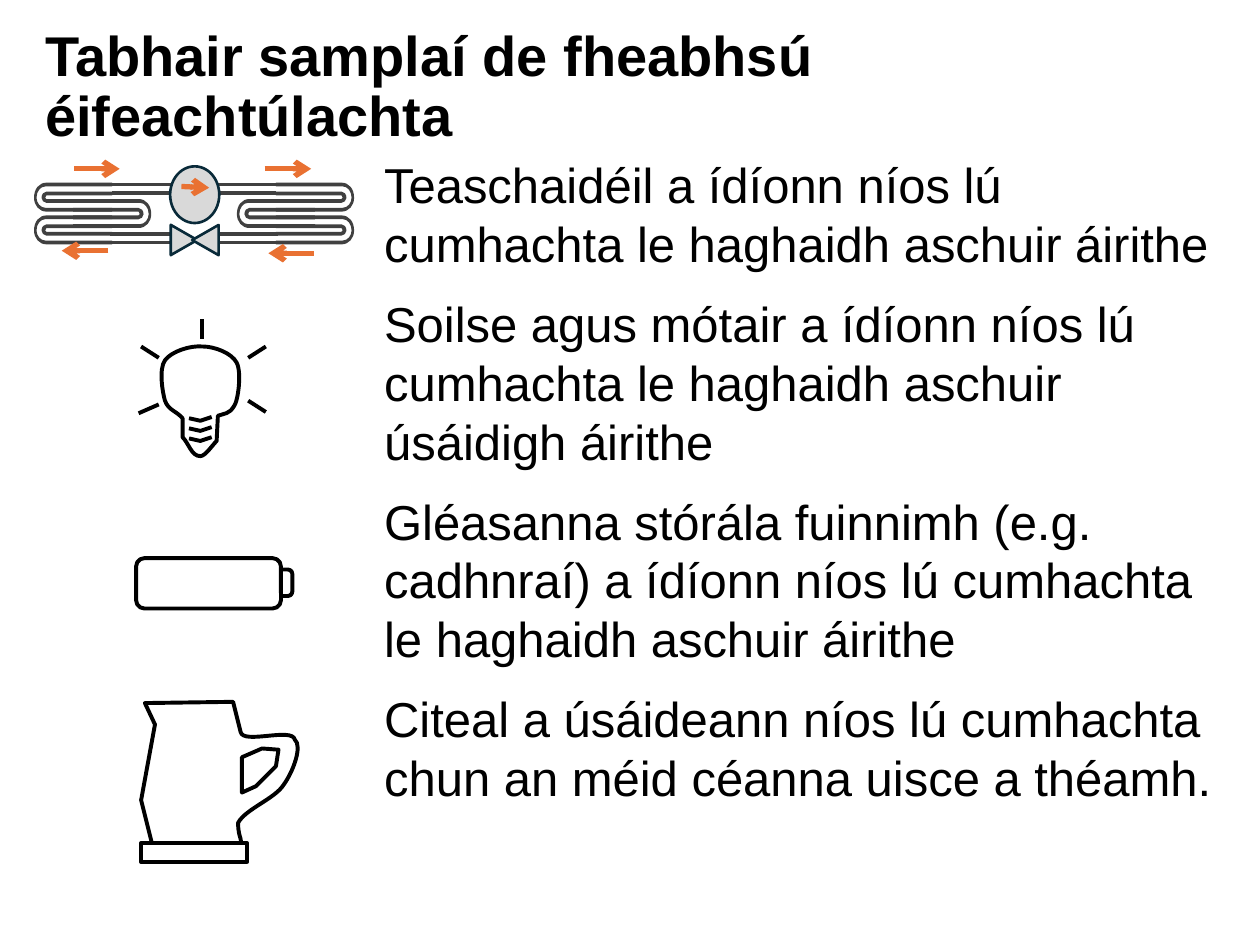
"""Build the slide on improving energy efficiency, with four line drawings."""
from lxml import etree
from pptx import Presentation
from pptx.dml.color import RGBColor
from pptx.enum.shapes import MSO_CONNECTOR, MSO_SHAPE
from pptx.enum.text import MSO_AUTO_SIZE
from pptx.oxml.ns import qn
from pptx.util import Inches, Pt

COLORS = {
    "black": "000000", "white": "FFFFFF", "pipe": "404040",
    "metal": "D9D9D9", "edge": "092A39", "flow": "E97132",
}

prs = Presentation()
prs.slide_width, prs.slide_height = Inches(10), Inches(7.5)
s = prs.slides.add_slide(prs.slide_layouts[6])


def paint(sp, fill, line, width=2.25):
    sp.shadow.inherit = False
    if fill:
        sp.fill.solid()
        sp.fill.fore_color.rgb = RGBColor.from_string(COLORS[fill])
    else:
        sp.fill.background()
    if line:
        sp.line.color.rgb = RGBColor.from_string(COLORS[line])
        sp.line.width = Pt(width)
    else:
        sp.line.fill.background()


def outline(steps, fill, line, closed=True):
    pts = [(Inches(step[i]), Inches(step[i + 1])) for step in steps for i in range(0, len(step), 2)]
    fb = s.shapes.build_freeform(*pts[0])
    fb.add_line_segments(pts[1:], close=closed)
    sp = fb.convert_to_shape()
    segments = iter(list(sp._element.iter(qn("a:lnTo"))))
    for step in steps[1:]:
        seg = next(segments)
        if len(step) == 6:
            seg.tag = qn("a:cubicBezTo")
            for _ in range(2):
                control = next(segments)
                seg.append(control[0])
                control.getparent().remove(control)
    paint(sp, fill, line)


title = ["Tabhair samplaí de fheabhsú éifeachtúlachta"]
examples = [
    "Teaschaidéil a ídíonn níos lú cumhachta le haghaidh aschuir áirithe",
    "Soilse agus mótair a ídíonn níos lú cumhachta le haghaidh aschuir úsáidigh áirithe",
    "Gléasanna stórála fuinnimh (e.g. cadhnraí) a ídíonn níos lú cumhachta le haghaidh aschuir áirithe",
    "Citeal a úsáideann níos lú cumhachta chun an méid céanna uisce a théamh.",
]
for box, texts, size, bold, spacing in [
    ((0.26, 0.17, 9.64, 0.59), title, 32, True, 0.9),
    ((2.95, 1.18, 6.78, 5.79), examples, 28, False, 1.0),
]:
    tf = s.shapes.add_textbox(*map(Inches, box)).text_frame
    tf.word_wrap = True
    tf.auto_size = MSO_AUTO_SIZE.SHAPE_TO_FIT_TEXT
    for i, text in enumerate(texts):
        p = tf.paragraphs[0] if i == 0 else tf.add_paragraph()
        p.text = text
        p.line_spacing = spacing
        if i:
            p.space_before = Pt(12)
        r = p.runs[0]
        r.font.name, r.font.size, r.font.bold = "Arial", Pt(size), bold
        r.font.color.rgb = RGBColor.from_string(COLORS["black"])

outer_bend = [
    (0, 0), (0.52, 0), (0.58, 0, 0.62, 0.05, 0.62, 0.12), (0.62, 0.18, 0.58, 0.23, 0.52, 0.23),
    (0, 0.23), (0, 0.2), (0.53, 0.2), (0.57, 0.2, 0.6, 0.16, 0.6, 0.12),
    (0.6, 0.07, 0.57, 0.03, 0.53, 0.03), (0, 0.03),
]
inner_bend = [
    (0, 0.07), (0.52, 0.07), (0.54, 0.07, 0.56, 0.09, 0.56, 0.12), (0.56, 0.14, 0.54, 0.16, 0.52, 0.16),
    (0, 0.16), (0, 0.13), (0.52, 0.13), (0.52, 0.13, 0.53, 0.13, 0.53, 0.12),
    (0.53, 0.11, 0.52, 0.1, 0.52, 0.1), (0, 0.1),
]
for x, y, side in [
    (2.19, 1.45, 1), (2.19, 1.71, 1), (2.5, 1.58, -1),
    (0.89, 1.45, -1), (0.89, 1.71, -1), (0.58, 1.58, 1),
]:
    for bend in (outer_bend, inner_bend):
        outline([tuple(y + v if i % 2 else x + side * v for i, v in enumerate(step)) for step in bend],
                "pipe", None)

for x, top in [(1.72, 1.84), (1.7, 1.45), (0.87, 1.84), (0.89, 1.45)]:
    for y in (top, top + 0.07):
        outline([(x, y), (x + 0.49, y), (x + 0.49, y + 0.03), (x, y + 0.03)], "pipe", None)

for kind, box, turn, fill, line, width in [
    (MSO_SHAPE.OVAL, (1.35, 1.32, 0.39, 0.45), 0, "metal", "edge", 1.5),
    (MSO_SHAPE.ISOSCELES_TRIANGLE, (1.34, 1.8, 0.24, 0.21), 90, "metal", "edge", 1.5),
    (MSO_SHAPE.ISOSCELES_TRIANGLE, (1.51, 1.8, 0.24, 0.21), 270, "metal", "edge", 1.5),
    (MSO_SHAPE.ROUNDED_RECTANGLE, (2.1, 4.52, 0.22, 0.21), 0, "white", "black", 2.25),
    (MSO_SHAPE.ROUNDED_RECTANGLE, (1.08, 4.43, 1.15, 0.4), 0, "white", "black", 2.25),
]:
    sp = s.shapes.add_shape(kind, *map(Inches, box))
    sp.rotation = turn
    paint(sp, fill, line, width)

flows = [
    (2.1, 1.34, 2.47, 1.34), (0.59, 1.34, 0.95, 1.34), (2.49, 2.01, 2.13, 2.01),
    (0.86, 1.99, 0.49, 1.99), (1.44, 1.48, 1.66, 1.49),
]
rays = [
    (1.12, 2.75, 1.26, 2.84), (1.97, 2.84, 2.11, 2.75), (1.6, 2.69, 1.6, 2.53),
    (2.11, 3.27, 1.97, 3.18), (1.26, 3.21, 1.1, 3.28),
]
for lines, color, width, arrow in [(flows, "flow", 3, True), (rays, "black", 2.25, False)]:
    for ends in lines:
        sp = s.shapes.add_connector(MSO_CONNECTOR.STRAIGHT, *map(Inches, ends))
        sp.line.color.rgb = RGBColor.from_string(COLORS[color])
        sp.line.width = Pt(width)
        if arrow:
            etree.SubElement(sp.line._get_or_add_ln(), qn("a:tailEnd"), type="arrow")
        etree.SubElement(sp._element.spPr, qn("a:effectLst"))

bulb = [
    (1.45, 3.47), (1.45, 3.32), (1.4, 3.26, 1.34, 3.26, 1.31, 3.18),
    (1.29, 3.11, 1.26, 2.93, 1.31, 2.86), (1.36, 2.79, 1.51, 2.74, 1.61, 2.75),
    (1.7, 2.75, 1.84, 2.8, 1.88, 2.88), (1.92, 2.96, 1.89, 3.18, 1.86, 3.22),
    (1.82, 3.29, 1.78, 3.28, 1.73, 3.3), (1.72, 3.5),
    (1.68, 3.54, 1.63, 3.62, 1.59, 3.62), (1.52, 3.62, 1.5, 3.52, 1.45, 3.47),
]
outline(bulb, "white", "black")
for y in (3.32, 3.4, 3.48):
    outline([(1.5, y), (1.59, y + 0.02), (1.68, y - 0.01)], None, "black", closed=False)

kettle = [
    (1.23, 6.79), (1.89, 6.77), (1.94, 6.63, 1.89, 6.68, 1.89, 6.53),
    (1.95, 6.42, 2.18, 6.34, 2.25, 6.23), (2.33, 6.12, 2.4, 5.92, 2.34, 5.87),
    (2.32, 5.77, 1.93, 5.91, 1.91, 5.81), (1.85, 5.57), (1.15, 5.58), (1.23, 5.75), (1.12, 6.35),
]
handle = [(1.92, 6.01), (2.08, 5.94), (2.21, 5.95), (2.19, 6.08), (2.03, 6.24), (1.92, 6.29)]
outline(kettle, "white", "black")
sp = s.shapes.add_shape(MSO_SHAPE.RECTANGLE, Inches(1.12), Inches(6.69), Inches(0.84), Inches(0.15))
paint(sp, "white", "black")
outline(handle, "white", "black")

prs.save("out.pptx")
